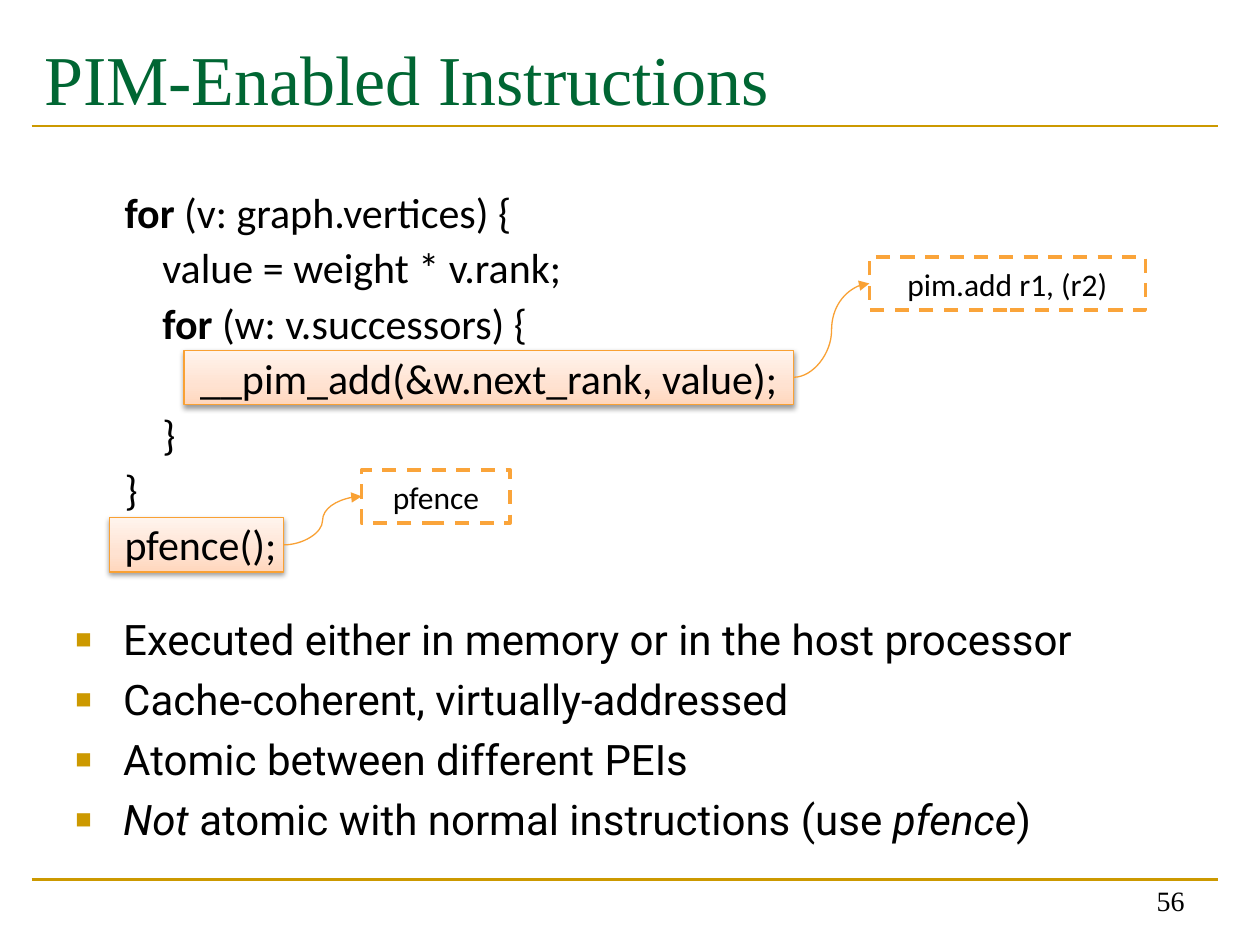
from dataclasses import dataclass

from pptx import Presentation
from pptx import util as u
from pptx.dml import color
from pptx.enum import dml, shapes, text
from pptx.oxml import parse_xml
from pptx.oxml.ns import qn

NAMESPACE = 'xmlns:a="http://schemas.openxmlformats.org/drawingml/2006/main"'
GOLD, ORANGE, BLACK = "CC9900", "F9A134", "000000"
CODE_INDENT = 0.3

TITLE_FONT = {"name": "Times New Roman", "size": u.Pt(40)}
NUMBER_FONT = {"name": "Times New Roman", "size": u.Pt(16)}
CODE_FONT = {"name": "Calibri", "size": u.Pt(24)}
LABEL_FONT = {"name": "Calibri", "size": u.Pt(18)}
BULLET_FONT = {"name": "Roboto", "size": u.Pt(24)}


@dataclass
class Area:
    left: float
    top: float
    width: float
    height: float

    def lengths(self) -> list:
        return [u.Inches(v) for v in (self.left, self.top, self.width, self.height)]


@dataclass
class CodeLine:
    level: int
    code: str
    keyword: str = ""


@dataclass
class Translation:
    """A highlighted call and the instruction it becomes."""
    call: Area
    label: Area
    instruction: str


CODE = [
    CodeLine(0, " (v: graph.vertices) {", "for"),
    CodeLine(1, "value = weight * v.rank;"),
    CodeLine(1, " (w: v.successors) {", "for"),
    CodeLine(2, "__pim_add(&w.next_rank, value);"),
    CodeLine(1, "}"),
    CodeLine(0, "}"),
    CodeLine(0, "pfence();"),
]
TRANSLATIONS = [
    Translation(Area(0.87, 4.11, 1.38, 0.43), Area(2.87, 3.73, 1.18, 0.42), "pfence"),
    Translation(Area(1.46, 2.78, 4.84, 0.43), Area(6.9, 2.04, 2.19, 0.42),
                "pim.add r1, (r2)"),
]
# Each bullet is a list of (words, italic) spans
BULLETS = [
    [("Executed either in memory or in the host processor", False)],
    [("Cache-coherent, virtually-addressed", False)],
    [("Atomic between different PEIs", False)],
    [("Not", True), (" atomic with normal instructions (use ", False),
     ("pfence", True), (")", False)],
]


def rgb(value: str) -> color.RGBColor:
    return color.RGBColor.from_string(value)


def set_values(target, values: dict) -> None:
    for name, value in values.items():
        setattr(target, name, value)


def add_span(para, words: str, font: dict, ink: str = BLACK, **extra) -> None:
    span = para.add_run()
    span.text = words
    set_values(span.font, {**font, **extra})
    span.font.color.rgb = rgb(ink)


def add_text_box(page, area: Area):
    frame = page.shapes.add_textbox(*area.lengths()).text_frame
    frame.word_wrap = True
    return frame


def next_para(frame, index: int):
    return frame.add_paragraph() if index else frame.paragraphs[0]


def add_connector(page, kind, ends: list, ink: str, width: float):
    line = page.shapes.add_connector(kind, *[u.Inches(v) for v in ends])
    line.line.color.rgb = rgb(ink)
    line.line.width = u.Pt(width)
    line._element.spPr.append(parse_xml(f"<a:effectLst {NAMESPACE}/>"))
    return line


def add_box(page, area: Area, ink: str, width: float):
    box = page.shapes.add_shape(shapes.MSO_SHAPE.RECTANGLE, *area.lengths())
    box.shadow.inherit = False
    box.line.color.rgb = rgb(ink)
    box.line.width = u.Pt(width)
    return box


def add_highlight(page, area: Area):
    box = add_box(page, area, ORANGE, 0.75)
    # Three-stop gradient and soft shadow
    box.fill.gradient()
    box.fill.gradient_angle = 90
    stops = box._element.spPr.find(qn("a:gradFill")).find(qn("a:gsLst"))
    for stop in list(stops):
        stops.remove(stop)
    for percent, ink in ((0, "FFD7BD"), (35, "FFE2D1"), (100, "FFF4ED")):
        stops.append(parse_xml(f'<a:gs {NAMESPACE} pos="{percent * 1000}">'
                               f'<a:srgbClr val="{ink}"/></a:gs>'))
    box._element.spPr.find(qn("a:effectLst")).append(parse_xml(
        f'<a:outerShdw {NAMESPACE} blurRad="{u.Pt(3.1)}" dist="{u.Pt(1.6)}" '
        f'dir="5400000" rotWithShape="0"><a:srgbClr val="{BLACK}">'
        '<a:alpha val="38000"/></a:srgbClr></a:outerShdw>'))
    return box


def add_label(page, area: Area, words: str):
    box = add_box(page, area, "FAA43A", 2)
    box.fill.solid()
    box.fill.fore_color.rgb = rgb("FFFFFF")
    box.line.dash_style = dml.MSO_LINE.DASH
    box.text_frame.vertical_anchor = text.MSO_ANCHOR.MIDDLE
    para = box.text_frame.paragraphs[0]
    para.alignment = text.PP_ALIGN.CENTER
    add_span(para, words, LABEL_FONT)
    return box


def add_curved_arrow(page, source, target) -> None:
    arrow = add_connector(page, shapes.MSO_CONNECTOR.CURVE, [0, 0, 1, 1], ORANGE, 0.75)
    arrow.begin_connect(source, 3)
    arrow.end_connect(target, 1)
    arrow.line._get_or_add_ln().append(
        parse_xml(f'<a:tailEnd {NAMESPACE} type="triangle"/>'))


def add_code(page, area: Area) -> None:
    frame = add_text_box(page, area)
    for index, line in enumerate(CODE):
        para = next_para(frame, index)
        para.line_spacing = 1.1
        para._p.get_or_add_pPr().set("marL", str(u.Inches(CODE_INDENT * line.level)))
        if line.keyword:
            add_span(para, line.keyword, CODE_FONT, bold=True)
        add_span(para, line.code, CODE_FONT)


def add_bullets(page, area: Area) -> None:
    frame = add_text_box(page, area)
    for index, spans in enumerate(BULLETS):
        para = next_para(frame, index)
        para.space_before = u.Pt(5.5)
        properties = para._p.get_or_add_pPr()
        properties.set("marL", str(u.Inches(0.38)))
        properties.set("indent", str(u.Inches(-0.38)))
        for part in (f'<a:buClr {NAMESPACE}><a:srgbClr val="{GOLD}"/></a:buClr>',
                     f'<a:buSzPct {NAMESPACE} val="65000"/>',
                     f'<a:buFont {NAMESPACE} typeface="Arial"/>',
                     f'<a:buChar {NAMESPACE} char="■"/>'):
            properties.append(parse_xml(part))
        for words, italic in spans:
            add_span(para, words, BULLET_FONT, italic=italic)


def main() -> None:
    deck = Presentation()
    deck.slide_width, deck.slide_height = u.Inches(10), u.Inches(7.5)
    page = deck.slides.add_slide(deck.slide_layouts[5])

    # Rules under the title and above the page number
    for height in (6.98, 1):
        add_connector(page, shapes.MSO_CONNECTOR.STRAIGHT,
                      [0.25, height, 9.67, height], GOLD, 1.5)

    # Title
    title = page.shapes.title
    title.left, title.top, title.width, title.height = Area(0.25, 0.17, 9.42, 1.17).lengths()
    set_values(title.text_frame, {
        "vertical_anchor": text.MSO_ANCHOR.TOP, "margin_top": u.Inches(0.11),
        "auto_size": text.MSO_AUTO_SIZE.NONE, "word_wrap": True})
    heading = title.text_frame.paragraphs[0]
    heading.alignment = text.PP_ALIGN.LEFT
    add_span(heading, "PIM-Enabled Instructions", TITLE_FONT, "006633")

    # Page number
    frame = add_text_box(page, Area(7.17, 6.83, 2.33, 0.5))
    frame.vertical_anchor = text.MSO_ANCHOR.BOTTOM
    frame.paragraphs[0].alignment = text.PP_ALIGN.RIGHT
    add_span(frame.paragraphs[0], "56", NUMBER_FONT)

    # Bullets, then code over its highlights
    add_bullets(page, Area(0.5, 4.82, 9, 2.22))
    calls = [add_highlight(page, item.call) for item in TRANSLATIONS]
    add_code(page, Area(0.89, 1.39, 8.29, 3.21))

    # Instructions that the calls become
    for call, item in zip(calls, TRANSLATIONS):
        add_curved_arrow(page, call, add_label(page, item.label, item.instruction))

    deck.save("out.pptx")


if __name__ == "__main__":
    main()
